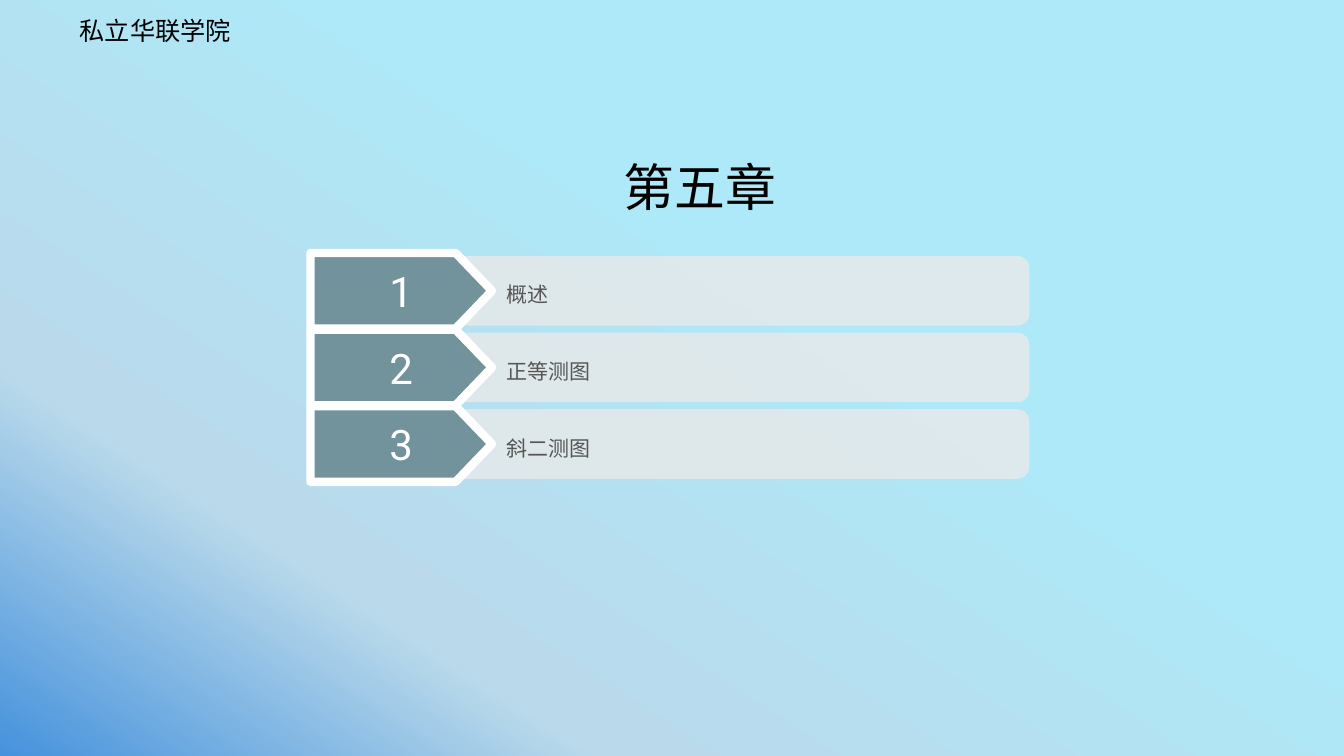
import copy
import math

import pptx
import pptx.dml.color
import pptx.enum.text
import pptx.oxml.ns
import pptx.util
from lxml import etree
from pptx.util import Inches

SCHOOL = "私立华联学院"
CHAPTER = "第五章"
SECTIONS = ["概述", "正等测图", "斜二测图"]

THEME = {
    "background": [(0, "4692DC"), (0.24, "BADAEB"), (0.62, "ADE9F8")],
    "angle": 57,
    "bar": "E3E9EB",
    "bar_opacity": 90,
    "arrow": "72939C",
    "white": "FFFFFF",
    "black": "000000",
    "label": "565656",
    "font": "Roboto",
    "school_font": "Noto Sans CJK JP",
    "school_size": 18,
    "chapter_size": 36.3,
    "number_size": 30,
    "label_size": 15,
    "outline": 6,
}

# Section rows, in inches
ROW_TOP, ROW_PITCH = 2.51, 0.76
ARROW_LEFT, ARROW_SHOULDER, ARROW_TIP, ARROW_HEIGHT = 3.08, 4.52, 4.88, 0.75
BAR_LEFT, BAR_RIGHT, BAR_HEIGHT, BAR_RADIUS = 4.55, 10.21, 0.69, 0.12
BAR_OFFSET = 0.03
CORNER_STEPS = 12

ALIGN = pptx.enum.text.PP_ALIGN
ANCHOR = pptx.enum.text.MSO_ANCHOR


def rgb(value):
    return pptx.dml.color.RGBColor.from_string(value)


def add_element(parent, tag, **attributes):
    return etree.SubElement(parent, pptx.oxml.ns.qn(tag), **attributes)


def paint_background(slide):
    fill = slide.background.fill
    fill.gradient()
    fill.gradient_angle = THEME["angle"]
    stop_list = fill.gradient_stops[0]._gs.getparent()
    stop_list.append(copy.deepcopy(stop_list[-1]))
    for stop, (position, color) in zip(fill.gradient_stops, THEME["background"]):
        stop.position = position
        stop.color.rgb = rgb(color)


def write(shape, text, size, color, font=THEME["font"], align=ALIGN.LEFT,
          anchor=ANCHOR.TOP, spacing=1.0, margins=(0.1, 0.05, 0.1, 0.05), wrap=True):
    frame = shape.text_frame
    frame.word_wrap = wrap
    frame.vertical_anchor = anchor
    (frame.margin_left, frame.margin_top,
     frame.margin_right, frame.margin_bottom) = map(Inches, margins)
    paragraph = frame.paragraphs[0]
    paragraph.text = text
    paragraph.alignment = align
    paragraph.line_spacing = spacing
    paragraph.font.name = font
    paragraph.font.size = pptx.util.Pt(size)
    paragraph.font.color.rgb = rgb(color)


def add_outline(slide, points, color):
    start, *others = [(Inches(x), Inches(y)) for x, y in points]
    builder = slide.shapes.build_freeform(*start)
    builder.add_line_segments(others, close=True)
    shape = builder.convert_to_shape()
    shape.shadow.inherit = False
    shape.fill.solid()
    shape.fill.fore_color.rgb = rgb(color)
    return shape


def corner(center_x, center_y, start):
    """Points of a quarter circle, clockwise from the start angle."""
    angles = [math.radians(start + 90 * step / CORNER_STEPS)
              for step in range(CORNER_STEPS + 1)]
    return [(center_x + BAR_RADIUS * math.cos(angle),
             center_y + BAR_RADIUS * math.sin(angle)) for angle in angles]


def add_bar(slide, top, label):
    bottom = top + BAR_HEIGHT
    center_x = BAR_RIGHT - BAR_RADIUS
    points = [(BAR_LEFT, top),
              *corner(center_x, top + BAR_RADIUS, -90),
              *corner(center_x, bottom - BAR_RADIUS, 0),
              (BAR_LEFT, bottom)]
    bar = add_outline(slide, points, THEME["bar"])
    bar.line.fill.background()
    color = bar._element.spPr.find(".//" + pptx.oxml.ns.qn("a:srgbClr"))
    add_element(color, "a:alpha", val=str(THEME["bar_opacity"] * 1000))
    write(bar, label, THEME["label_size"], THEME["label"], anchor=ANCHOR.MIDDLE,
          spacing=1.3, margins=(0.47, 0, 0, 0))


def add_arrow(slide, top, number):
    bottom = top + ARROW_HEIGHT
    points = [(ARROW_LEFT, top), (ARROW_SHOULDER, top),
              (ARROW_TIP, top + ARROW_HEIGHT / 2),
              (ARROW_SHOULDER, bottom), (ARROW_LEFT, bottom)]
    arrow = add_outline(slide, points, THEME["arrow"])
    arrow.line.color.rgb = rgb(THEME["white"])
    arrow.line.width = pptx.util.Pt(THEME["outline"])
    add_element(arrow._element.spPr.find(pptx.oxml.ns.qn("a:ln")), "a:round")
    write(arrow, str(number), THEME["number_size"], THEME["white"],
          align=ALIGN.CENTER, anchor=ANCHOR.MIDDLE)


def main():
    presentation = pptx.Presentation()
    presentation.slide_width = Inches(13.33)
    presentation.slide_height = Inches(7.5)
    slide = presentation.slides.add_slide(presentation.slide_layouts[6])
    paint_background(slide)

    # School name
    school = slide.shapes.add_textbox(Inches(0.74), Inches(0.1), Inches(2.94), Inches(0.4))
    write(school, SCHOOL, THEME["school_size"], THEME["black"],
          font=THEME["school_font"], margins=(0.05,) * 4)

    # Numbered sections
    for index, label in enumerate(SECTIONS):
        top = ROW_TOP + index * ROW_PITCH
        add_bar(slide, top + BAR_OFFSET, label)
        add_arrow(slide, top, index + 1)

    # Chapter title
    chapter = slide.shapes.add_textbox(Inches(3.99), Inches(1.66), Inches(5.91), Inches(0.57))
    write(chapter, CHAPTER, THEME["chapter_size"], THEME["black"],
          align=ALIGN.CENTER, spacing=0.7)

    presentation.save("out.pptx")


if __name__ == "__main__":
    main()
